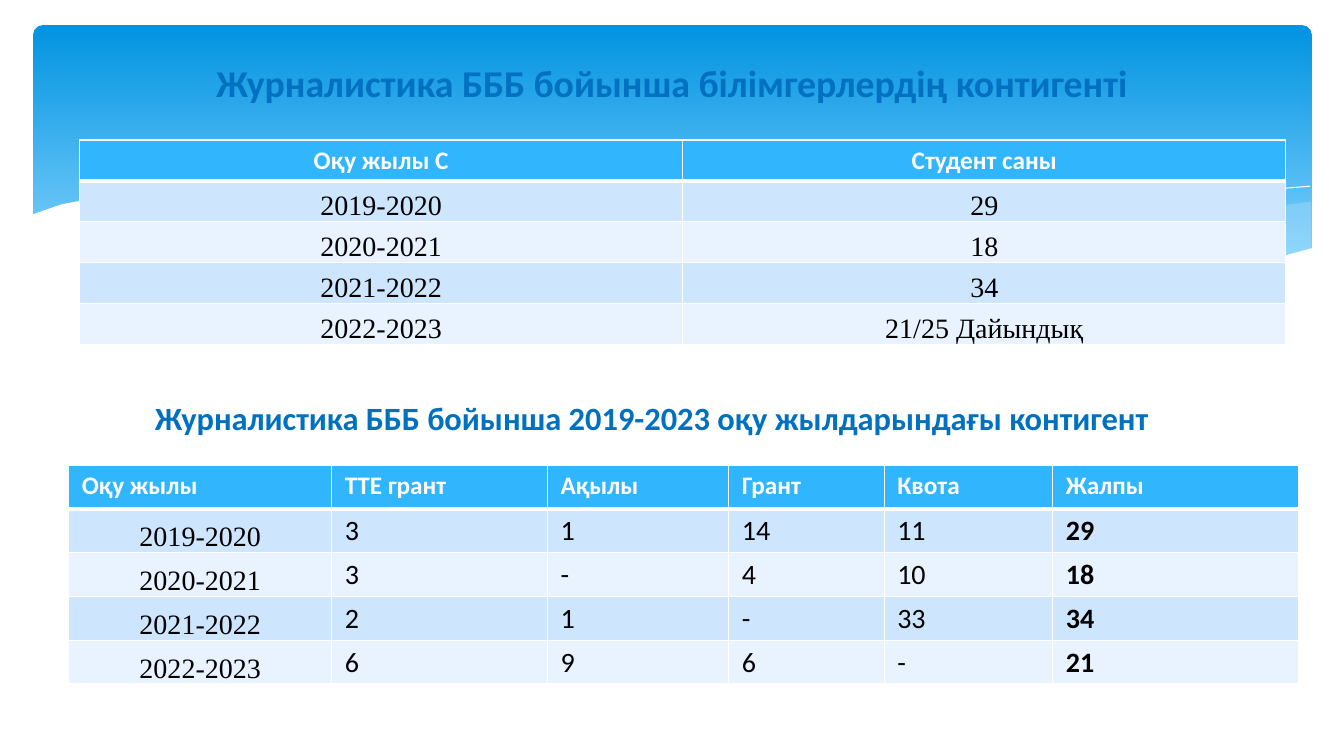
import lxml.etree
import pptx
import pptx.dml.color
import pptx.enum.shapes
import pptx.enum.text
import pptx.oxml.ns
import pptx.util

Pt = pptx.util.Pt
RGB = pptx.dml.color.RGBColor
ANCHOR = pptx.enum.text.MSO_ANCHOR
ALIGN = pptx.enum.text.PP_ALIGN
qn = pptx.oxml.ns.qn

WHITE = RGB(0xFF, 0xFF, 0xFF)
BLACK = RGB(0, 0, 0)
BLUE = RGB(0x00, 0x70, 0xC0)
BAND_TOP = RGB(0x02, 0x93, 0xE0)
BAND_BOTTOM = RGB(0x83, 0xD3, 0xFE)
WAVE = RGB(0xC6, 0xE7, 0xFC)
HEADER = RGB(0x31, 0xB6, 0xFD)
ROWS = (RGB(0xCE, 0xE5, 0xFE), RGB(0xE8, 0xF3, 0xFF))

RIGHT_WAVE = [(913, 126), (873, 131), (832, 137.5), (802, 142.5), (724, 156), (654, 167),
              (611, 173), (666, 178), (714, 181.5), (757, 182), (805, 180), (845, 175.5),
              (881, 168.5), (913, 160)]
MIDDLE_WAVE = [(833, 178.5), (780, 173), (721, 165), (654, 155), (580, 142), (523, 132),
               (470, 124.5), (422, 119.5), (359, 116), (307, 116), (251, 119.5), (324, 128),
               (407.5, 142), (484.5, 155), (553.5, 165.5), (629, 175), (695, 180.5), (761, 182)]
FALLING_LINE = [(273, 122.5), (315, 118), (376, 116.5), (446, 119), (510.5, 124), (587, 132),
                (674.5, 144.5), (739.5, 155.5), (810, 170), (847.5, 178)]
RISING_LINE = [(565, 167), (643.5, 151), (694, 142.5), (750, 133), (808, 125.5), (863, 119),
               (912, 115)]
WHITE_WAVE = [(914.5, 159), (879, 168.5), (839, 175.5), (793, 180), (738, 181), (674, 178),
              (597.5, 170.5), (509, 158.5), (405.5, 140.5), (326, 127.5), (257, 119),
              (196.5, 115), (145.5, 114.5), (90, 116.5), (49, 122.5), (20, 128),
              (-1.5, 135.5), (-1.5, 219), (914.5, 219)]

STUDENTS = [
    ("Оқу жылы С", "Студент саны"),
    ("2019-2020", "29"),
    ("2020-2021", "18"),
    ("2021-2022", "34"),
    ("2022-2023", "21/25 Дайындық"),
]
FUNDING = [
    ("Оқу жылы", "ТТЕ грант", "Ақылы", "Грант", "Квота", "Жалпы"),
    ("2019-2020", "3", "1", "14", "11", "29"),
    ("2020-2021", "3", "-", "4", "10", "18"),
    ("2021-2022", "2", "1", "-", "33", "34"),
    ("2022-2023", "6", "9", "6", "-", "21"),
]


def add_wave(slide, x, y, points, color=None, alpha=100):
    """Draw a filled wave, or a white hairline when no colour is given."""
    pts = [(Pt(x + dx), Pt(y + dy)) for dx, dy in points]
    builder = slide.shapes.build_freeform(*pts[0], scale=1.0)
    builder.add_line_segments(pts[1:], close=color is not None)
    sp = builder.convert_to_shape()
    sp.shadow.inherit = False
    if color is None:
        sp.fill.background()
        sp.line.color.rgb = WHITE
        sp.line.width = Pt(0)
        return
    sp.line.fill.background()
    sp.fill.solid()
    sp.fill.fore_color.rgb = color
    if alpha < 100:
        clr = sp.fill._xPr.find(qn("a:solidFill"))[0]
        lxml.etree.SubElement(clr, qn("a:alpha"), val=str(alpha * 1000))


def add_banner(slide, x, y, w, h):
    """Draw the gradient band and the waves along its lower edge."""
    kind = pptx.enum.shapes.MSO_SHAPE.ROUNDED_RECTANGLE
    sp = slide.shapes.add_shape(kind, Pt(x), Pt(y), Pt(w), Pt(h))
    sp.adjustments[0] = 0.034
    sp.shadow.inherit = False
    sp.line.fill.background()
    sp.fill.gradient()
    sp.fill.gradient_angle = 270
    stops = sp.fill.gradient_stops
    for stop, color, position in zip(stops, (BAND_TOP, BAND_BOTTOM), (0, 0.9)):
        stop.color.rgb = color
        stop.position = position
    add_wave(slide, x, y, RIGHT_WAVE, WAVE, 29)
    add_wave(slide, x, y, MIDDLE_WAVE, WAVE, 40)
    add_wave(slide, x, y, FALLING_LINE)
    add_wave(slide, x, y, RISING_LINE)
    add_wave(slide, x, y, WHITE_WAVE, WHITE)


def style_text(p, font, size, color, bold):
    """Format every run of a paragraph."""
    for r in p.runs:
        r.font.name = font
        r.font.size = Pt(size)
        r.font.color.rgb = color
        r.font.bold = bold


def add_heading(slide, x, y, w, h, text, size, inset):
    """Add a centred blue heading, inset from the top of its box."""
    tf = slide.shapes.add_textbox(Pt(x), Pt(y), Pt(w), Pt(h)).text_frame
    tf.word_wrap = True
    tf.vertical_anchor = ANCHOR.TOP
    tf.margin_top = Pt(inset)
    p = tf.paragraphs[0]
    p.text = text
    p.alignment = ALIGN.CENTER
    style_text(p, "Calibri", size, BLUE, True)


def set_borders(cell, bottom):
    """Give a cell white borders, with its own bottom width."""
    tcPr = cell._tc.get_or_add_tcPr()
    for side, width in (("L", 1), ("R", 1), ("T", 1), ("B", bottom)):
        ln = lxml.etree.SubElement(tcPr, qn(f"a:ln{side}"), w=str(Pt(width)))
        fill = lxml.etree.SubElement(ln, qn("a:solidFill"))
        lxml.etree.SubElement(fill, qn("a:srgbClr"), val=str(WHITE))


def add_data_table(slide, x, y, col_widths, row_height, rows, serif_cols, header_align, bold_col=None):
    """Add a banded table whose serif columns are centred at the bottom."""
    w, h = sum(col_widths), row_height * len(rows)
    table = slide.shapes.add_table(len(rows), len(col_widths), Pt(x), Pt(y), Pt(w), Pt(h)).table
    for column, width in zip(table.columns, col_widths):
        column.width = Pt(width)
    for i, row in enumerate(rows):
        table.rows[i].height = Pt(row_height)
        for j, text in enumerate(row):
            cell = table.cell(i, j)
            set_borders(cell, 1 if i else 3)
            cell.fill.solid()
            cell.fill.fore_color.rgb = ROWS[(i - 1) % 2] if i else HEADER
            serif = i > 0 and j in serif_cols
            cell.vertical_anchor = ANCHOR.BOTTOM if serif else ANCHOR.TOP
            cell.margin_left = cell.margin_right = Pt(0.7 if serif else 9.4)
            cell.margin_top = Pt(0.7 if serif else 3.6)
            cell.margin_bottom = Pt(0 if serif else 3.6)
            p = cell.text_frame.paragraphs[0]
            p.text = text
            if i == 0:
                p.alignment = header_align
                style_text(p, "Calibri", 18, WHITE, True)
            else:
                p.alignment = ALIGN.CENTER if serif else ALIGN.LEFT
                font = "Times New Roman" if serif else "Calibri"
                style_text(p, font, 20, BLACK, j == bold_col)


def main():
    """Build the slide and save it."""
    prs = pptx.Presentation()
    prs.slide_width, prs.slide_height = Pt(960), Pt(540)
    slide = prs.slides.add_slide(prs.slide_layouts[6])
    add_banner(slide, 23.8, 18, 913, 194.4)
    add_heading(slide, 48, 21.6, 864, 124,
                "Журналистика БББ бойынша білімгерлердің контигенті", 27, 21)
    add_heading(slide, 33.8, 264.2, 864, 79,
                "Журналистика БББ бойынша 2019-2023 оқу жылдарындағы контигент", 23.2, 20)
    add_data_table(slide, 49, 332.6, (188, 154, 129.6, 111, 120.4, 176), 31.1,
                   FUNDING, (0,), ALIGN.LEFT, bold_col=5)
    add_data_table(slide, 56.9, 100, (430.8, 430.8), 29.2, STUDENTS, (0, 1), ALIGN.CENTER)
    prs.save("out.pptx")


if __name__ == "__main__":
    main()
